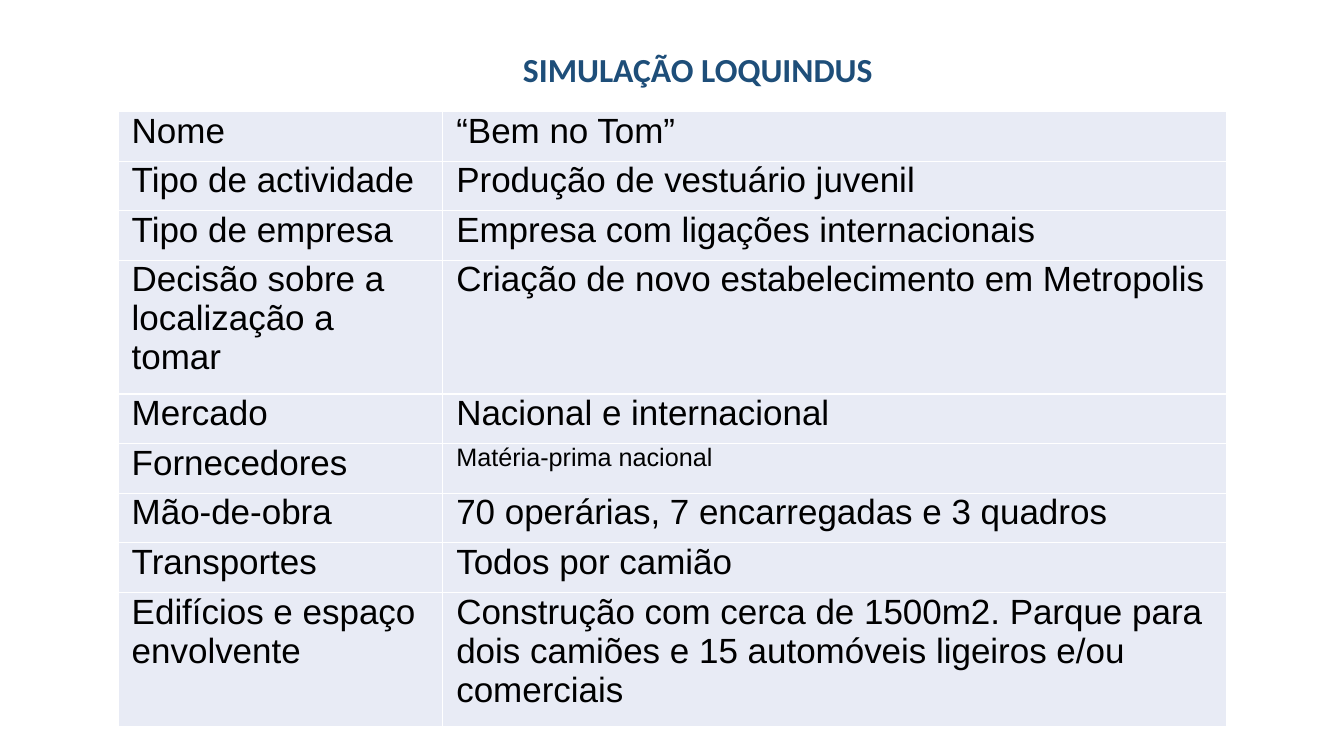
from lxml import etree
from pptx import Presentation
from pptx.dml.color import RGBColor
from pptx.oxml import ns
from pptx.util import Cm, Pt

ROWS = [
    ("Nome", "“Bem no Tom”", 1.25, 25),
    ("Tipo de actividade", "Produção de vestuário juvenil", 1.25, 25),
    ("Tipo de empresa", "Empresa com ligações internacionais", 1.25, 25),
    ("Decisão sobre a localização a tomar",
     "Criação de novo estabelecimento em Metropolis", 3.37, 25),
    ("Mercado", "Nacional e internacional", 1.25, 25),
    ("Fornecedores", "Matéria-prima nacional", 1.25, 18),
    ("Mão-de-obra", "70 operárias, 7 encarregadas e 3 quadros", 1.25, 25),
    ("Transportes", "Todos por camião", 1.25, 25),
    ("Edifícios e espaço\nenvolvente",
     "Construção com cerca de 1500m2. Parque para dois camiões "
     "e 15 automóveis ligeiros e/ou comerciais", 3.37, 25),
]
COLS = (8.18, 19.76)


def tint(code):
    return RGBColor.from_string(code)


def style(para, size, face, color, bold=False):
    para.font.size = Pt(size)
    para.font.name = face
    para.font.bold = bold
    para.font.color.rgb = tint(color)


def border(cell, color, width):
    props = cell._tc.get_or_add_tcPr()
    for side in ("lnL", "lnR", "lnT", "lnB"):
        line = etree.SubElement(props, ns.qn("a:" + side), w=str(Pt(width)))
        fill = etree.SubElement(line, ns.qn("a:solidFill"))
        etree.SubElement(fill, ns.qn("a:srgbClr"), val=color)


def fill_cell(cell, words, size):
    cell.margin_left = cell.margin_right = Cm(0.34)
    cell.margin_top = cell.margin_bottom = 0
    border(cell, "FFFFFF", 1)
    cell.fill.solid()
    cell.fill.fore_color.rgb = tint("E8EBF5")
    cell.text = words
    for para in cell.text_frame.paragraphs:
        style(para, size, "Arial", "000000")


def add_title(slide, left, top, width, height):
    box = slide.shapes.add_textbox(Cm(left), Cm(top), Cm(width), Cm(height))
    frame = box.text_frame
    frame.word_wrap = False
    frame.text = "SIMULAÇÃO LOQUINDUS"
    style(frame.paragraphs[0], 24, "Calibri", "1E4E79", True)


def add_facts(slide, left, top):
    high = sum(row[2] for row in ROWS)
    frame = slide.shapes.add_table(len(ROWS), len(COLS), Cm(left), Cm(top),
                                   Cm(sum(COLS)), Cm(high))
    table = frame.table
    table.first_row = table.horz_banding = False
    for col, width in zip(table.columns, COLS):
        col.width = Cm(width)
    for row, (label, fact, height, size) in zip(table.rows, ROWS):
        row.height = Cm(height)
        fill_cell(row.cells[0], label, 25)
        fill_cell(row.cells[1], fact, size)


def main():
    deck = Presentation()
    deck.slide_width, deck.slide_height = Cm(33.87), Cm(19.05)
    slide = deck.slides.add_slide(deck.slide_layouts[6])
    add_facts(slide, 2.98, 2.81)
    add_title(slide, 12.93, 1.1, 9.4, 1.27)
    deck.save("out.pptx")


if __name__ == "__main__":
    main()
